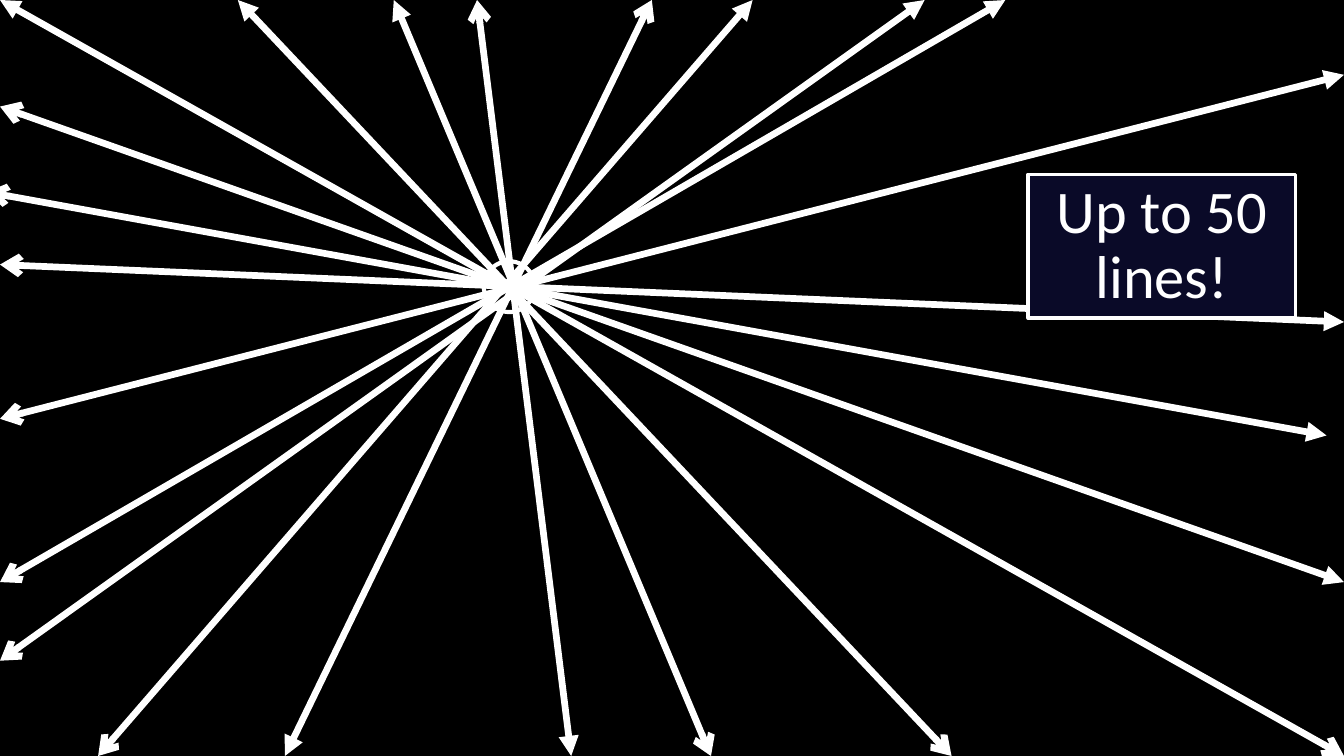
from lxml import etree
from pptx import Presentation
from pptx.dml.color import RGBColor
from pptx.enum.shapes import MSO_CONNECTOR, MSO_SHAPE
from pptx.enum.text import MSO_ANCHOR, MSO_AUTO_SIZE, PP_ALIGN
from pptx.oxml.ns import qn
from pptx.util import Inches, Pt

STRAIGHT = MSO_CONNECTOR.STRAIGHT
OVAL, RECTANGLE = MSO_SHAPE.OVAL, MSO_SHAPE.RECTANGLE
MIDDLE, CENTER = MSO_ANCHOR.MIDDLE, PP_ALIGN.CENTER
GROW = MSO_AUTO_SIZE.SHAPE_TO_FIT_TEXT

BLACK = RGBColor(0x00, 0x00, 0x00)
WHITE = RGBColor(0xFF, 0xFF, 0xFF)
NAVY = RGBColor(0x0A, 0x0A, 0x28)

WIDTH, HEIGHT = Inches(11.11), Inches(6.25)
BLANK_LAYOUT = 6

# Positions are percentages of the slide's width and height.
RAYS = [
    ((0, 0), (100, 100)),
    ((21.2, 100), (48.5, 0)),
    ((42.5, 100), (35.5, 0)),
    ((100, 9.9), (0, 55.4)),
    ((29.3, 0), (52.9, 100)),
    ((100, 42.6), (0, 35)),
    ((17.7, 0), (70.8, 100)),
    ((100, 77), (0, 14.1)),
    ((68.8, 0), (0, 87.4)),
    ((56, 0), (7.3, 100)),
    ((74.8, 0), (0, 77)),
    ((98.7, 57.6), (-1, 25.4)),
]
HUB = (36, 34.56, 3.78, 6.72)
CALLOUT = (76.5, 23.04, 19.9, 19.04)

FRAME_FORMAT = {"word_wrap": True, "auto_size": GROW, "vertical_anchor": MIDDLE}
PARAGRAPH_FORMAT = {"alignment": CENTER, "line_spacing": 0.9}
FONT_FORMAT = {"name": "Calibri", "size": Pt(36)}


def share(x, y):
    """Turn percentages of the slide into lengths."""
    return round(WIDTH * x / 100), round(HEIGHT * y / 100)


def apply_format(target, values):
    for name, value in values.items():
        setattr(target, name, value)


def set_line(sp, width):
    sp.line.color.rgb = WHITE
    sp.line.width = Pt(width)


def add_ray(slide, start, end):
    """Add a line with a triangle at its start and an open arrow at its end."""
    ray = slide.shapes.add_connector(STRAIGHT, *share(*start), *share(*end))
    set_line(ray, 4)
    ln = ray.line._get_or_add_ln()
    for tag, kind in (("a:headEnd", "triangle"), ("a:tailEnd", "arrow")):
        etree.SubElement(ln, qn(tag), type=kind)
    etree.SubElement(ray._element.spPr, qn("a:effectLst"))


def add_outlined(slide, kind, box, width):
    x, y, w, h = box
    sp = slide.shapes.add_shape(kind, *share(x, y), *share(w, h))
    sp.shadow.inherit = False
    sp.fill.background()
    set_line(sp, width)
    return sp


def add_callout(slide, box, text):
    sp = add_outlined(slide, RECTANGLE, box, 2)
    sp.fill.solid()
    sp.fill.fore_color.rgb = NAVY
    tf = sp.text_frame
    apply_format(tf, FRAME_FORMAT)
    p = tf.paragraphs[0]
    apply_format(p, PARAGRAPH_FORMAT)
    r = p.add_run()
    r.text = text
    apply_format(r.font, FONT_FORMAT)
    r.font.color.rgb = WHITE


def main():
    prs = Presentation()
    prs.slide_width, prs.slide_height = WIDTH, HEIGHT
    slide = prs.slides.add_slide(prs.slide_layouts[BLANK_LAYOUT])
    slide.background.fill.solid()
    slide.background.fill.fore_color.rgb = BLACK

    for start, end in RAYS:
        add_ray(slide, start, end)
    add_outlined(slide, OVAL, HUB, 2.5)
    add_callout(slide, CALLOUT, "Up to 50 lines!")
    prs.save("out.pptx")


if __name__ == "__main__":
    main()
